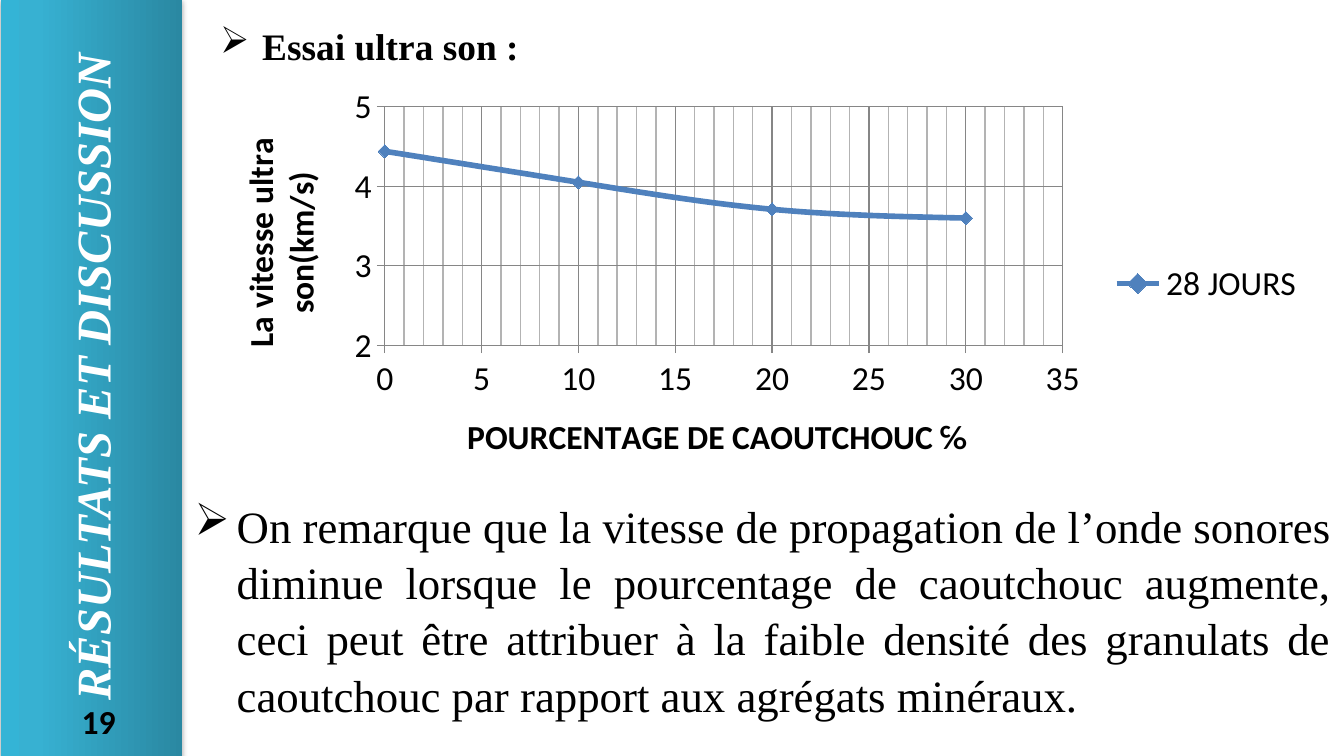
from dataclasses import dataclass

from lxml.etree import SubElement
from pptx import Presentation
from pptx.chart.data import XyChartData
from pptx.dml.color import RGBColor
from pptx.enum.chart import XL_CHART_TYPE, XL_LEGEND_POSITION, XL_MARKER_STYLE, XL_TICK_MARK
from pptx.enum.shapes import MSO_SHAPE
from pptx.enum.text import MSO_ANCHOR, PP_ALIGN
from pptx.oxml import parse_xml
from pptx.oxml.ns import nsdecls, qn
from pptx.util import Pt


@dataclass(frozen=True)
class Theme:
    serif: str = "Times New Roman"
    sans: str = "Calibri"
    black: str = "000000"
    white: str = "FFFFFF"
    series: str = "4F81BD"
    grid: str = "868686"
    minor_grid: str = "B3B3B3"
    banner: tuple = ((0, "2A88A2"), (80, "37B1D2"), (100, "34B4D6"))
    banner_size: float = 26
    body_size: float = 24
    heading_size: float = 20
    small_size: float = 18


@dataclass(frozen=True)
class Box:
    left: float
    top: float
    width: float
    height: float

    def emu(self) -> tuple:
        return tuple(Pt(v) for v in (self.left, self.top, self.width, self.height))


@dataclass(frozen=True)
class Label:
    text: str
    box: Box
    size: float
    font: str
    bold: bool = False
    bullet: bool = False
    wrap: bool = True
    align: PP_ALIGN = PP_ALIGN.LEFT
    spacing: float = 1.0


T = Theme()
INDENT = Pt(22.5)
LABELS = (
    Label("19", Box(36.7, 372.2, 33, 29), T.small_size, T.sans, bold=True, wrap=False),
    Label("Essai ultra son :", Box(110.9, 8.6, 233, 31.5), T.heading_size, T.serif, bold=True, bullet=True),
    Label(
        "On remarque que la vitesse de propagation de l’onde sonores diminue lorsque le "
        "pourcentage de caoutchouc augmente, ceci peut être attribuer à la faible densité "
        "des granulats de caoutchouc par rapport aux agrégats minéraux.",
        Box(97.2, 262, 622.8, 124), T.body_size, T.serif,
        bullet=True, align=PP_ALIGN.JUSTIFY, spacing=1.05,
    ),
)
POINTS = ((0, 4.44), (10, 4.05), (20, 3.71), (30, 3.6))


def style_font(font, size: float, name: str, color: str, bold: bool = False) -> None:
    font.size, font.name, font.bold = Pt(size), name, bold
    font.color.rgb = RGBColor.from_string(color)


def add_label(s, label: Label) -> None:
    tf = s.shapes.add_textbox(*label.box.emu()).text_frame
    tf.word_wrap = label.wrap
    tf.text = label.text
    p = tf.paragraphs[0]
    p.alignment, p.line_spacing = label.align, label.spacing
    style_font(p.runs[0].font, label.size, label.font, T.black, label.bold)
    if label.bullet:
        pPr = p._p.get_or_add_pPr()
        pPr.set("marL", str(INDENT))
        pPr.set("indent", str(-INDENT))
        SubElement(pPr, qn("a:buChar")).set("char", "➢")


def add_banner(s, text: str, box: Box) -> None:
    sp = s.shapes.add_shape(MSO_SHAPE.RECTANGLE, *box.emu())
    sp.rotation = 270
    sp.line.fill.background()
    stops = "".join(
        f'<a:gs pos="{pos * 1000}"><a:srgbClr val="{color}"/></a:gs>' for pos, color in T.banner
    )
    sp._element.spPr.find(qn("a:prstGeom")).addnext(parse_xml(
        f'<a:gradFill {nsdecls("a")} rotWithShape="1"><a:gsLst>{stops}</a:gsLst>'
        '<a:lin ang="16200000" scaled="0"/></a:gradFill>'
    ))
    sp._element.spPr.append(parse_xml(
        f'<a:effectLst {nsdecls("a")}><a:outerShdw blurRad="{Pt(3.1)}" dist="{Pt(1.8)}" '
        f'dir="5400000" rotWithShape="0"><a:srgbClr val="{T.black}"><a:alpha val="35000"/>'
        '</a:srgbClr></a:outerShdw></a:effectLst>'
    ))
    tf = sp.text_frame
    tf.text = text
    tf.vertical_anchor = MSO_ANCHOR.MIDDLE
    p = tf.paragraphs[0]
    p.alignment = PP_ALIGN.CENTER
    style_font(p.runs[0].font, T.banner_size, T.serif, T.white, True)
    p.runs[0].font.italic = True


def style_line(line, color: str, width: float) -> None:
    line.color.rgb = RGBColor.from_string(color)
    line.width = Pt(width)


def style_axis(axis, title: str, low: float, high: float, unit: float) -> None:
    axis.minimum_scale, axis.maximum_scale, axis.major_unit = low, high, unit
    axis.major_tick_mark, axis.minor_tick_mark = XL_TICK_MARK.OUTSIDE, XL_TICK_MARK.NONE
    axis.has_major_gridlines = True
    style_line(axis.major_gridlines.format.line, T.grid, 0.75)
    style_line(axis.format.line, T.grid, 0.75)
    tf = axis.axis_title.text_frame
    tf.text = title
    style_font(tf.paragraphs[0].runs[0].font, T.small_size, T.sans, T.black, True)


def add_minor_grid(axis, unit: float) -> None:
    axis.has_minor_gridlines = True
    axis.minor_unit = unit
    axis._element.find(qn("c:minorGridlines")).append(parse_xml(
        f'<c:spPr {nsdecls("c", "a")}><a:ln w="{Pt(0.75)}"><a:solidFill>'
        f'<a:srgbClr val="{T.minor_grid}"/></a:solidFill></a:ln></c:spPr>'
    ))


def add_speed_chart(s, box: Box) -> None:
    data = XyChartData()
    series = data.add_series("28 JOURS")
    for x, y in POINTS:
        series.add_data_point(x, y)
    chart = s.shapes.add_chart(XL_CHART_TYPE.XY_SCATTER_SMOOTH, *box.emu(), data).chart
    chart.has_title = False
    style_font(chart.font, T.small_size, T.sans, T.black)
    chart.has_legend = True
    chart.legend.position = XL_LEGEND_POSITION.RIGHT
    chart.legend.include_in_layout = False

    style_axis(chart.category_axis, "POURCENTAGE DE CAOUTCHOUC ℅", 0, 35, 5)
    style_axis(chart.value_axis, "La vitesse ultra son(km/s)", 2, 5, 1)
    add_minor_grid(chart.category_axis, 1)

    plot = chart.plots[0]
    plot.vary_by_categories = False
    line = plot.series[0]
    line._element.get_or_add_smooth().val = True
    style_line(line.format.line, T.series, 3)
    line.marker.style, line.marker.size = XL_MARKER_STYLE.DIAMOND, 7
    line.marker.format.fill.solid()
    line.marker.format.fill.fore_color.rgb = RGBColor.from_string(T.series)
    style_line(line.marker.format.line, T.series, 0.75)

    area = chart._chartSpace.chart.plotArea
    for old in area.findall(qn("c:layout")):
        area.remove(old)
    frame = "".join(
        f'<c:{tag} val="{value}"/>' for tag, value in (
            ("layoutTarget", "inner"), ("xMode", "edge"), ("yMode", "edge"),
            ("x", 0.16), ("y", 0.07), ("w", 0.61), ("h", 0.58),
        )
    )
    area.insert(0, parse_xml(
        f'<c:layout {nsdecls("c")}><c:manualLayout>{frame}</c:manualLayout></c:layout>'
    ))


def main() -> None:
    """Build the ultrasound test slide."""
    prs = Presentation()
    prs.slide_width, prs.slide_height = Pt(720), Pt(405)
    s = prs.slides.add_slide(prs.slide_layouts[6])
    add_banner(s, "RÉSULTATS ET DISCUSSION", Box(-154.1, 153.4, 406, 97.2))
    add_speed_chart(s, Box(110.9, 41.8, 595.4, 220.3))
    for label in LABELS:
        add_label(s, label)
    prs.save("out.pptx")


if __name__ == "__main__":
    main()
